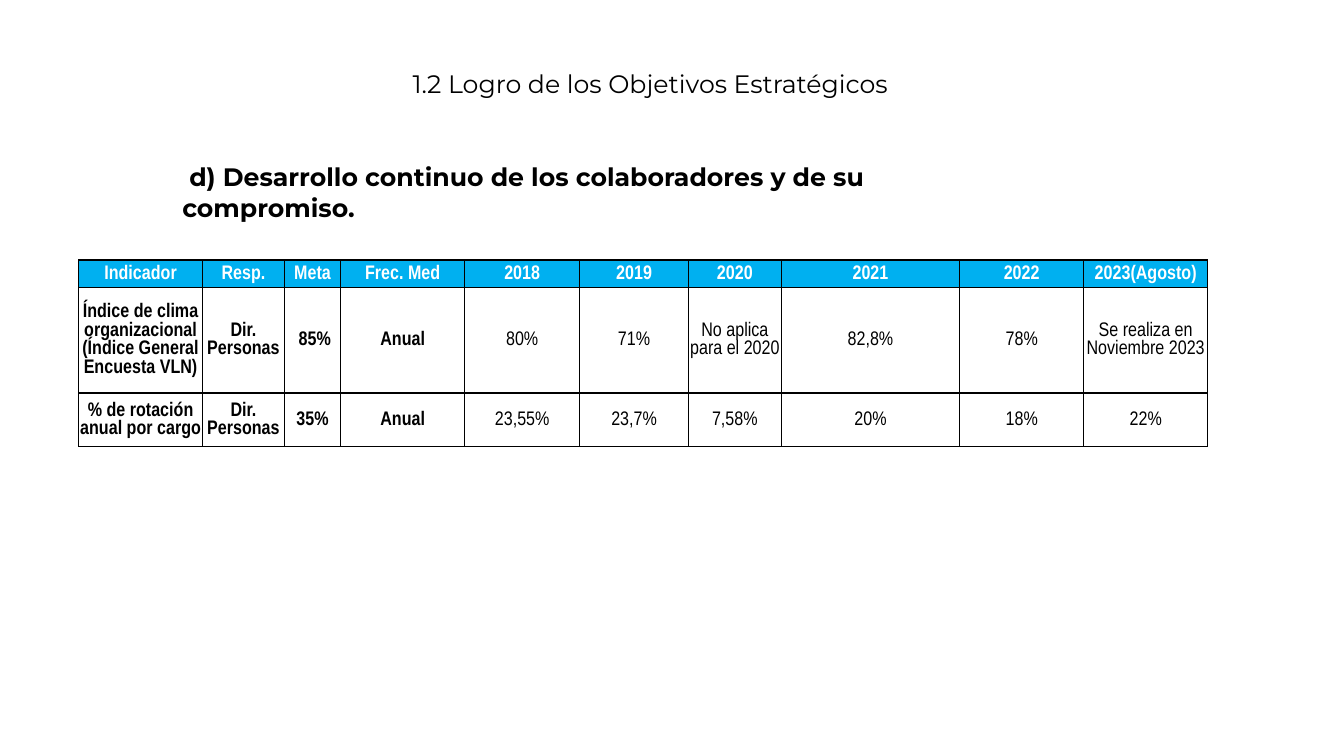
from lxml.etree import SubElement
from pptx import Presentation
from pptx.dml.color import RGBColor
from pptx.enum.text import MSO_ANCHOR as Anchor, PP_ALIGN as Align
from pptx.oxml.ns import qn
from pptx.util import Pt

PX = 9144
BLACK = RGBColor(0, 0, 0)
WHITE = RGBColor(255, 255, 255)
BLUE = RGBColor(0, 176, 240)

HEADINGS = [
    ("1.2 Logro de los Objetivos Estratégicos", (236, 42, 811, 81), Align.CENTER, False),
    ("d) Desarrollo continuo de los colaboradores y de su compromiso.",
     (171, 150, 807, 81), Align.LEFT, True),
]
ROWS = [
    ["Indicador", "Resp.", "Meta", "Frec. Med", "2018", "2019", "2020", "2021", "2022",
     "2023(Agosto)"],
    ["Índice de clima organizacional (Índice General Encuesta VLN)", "Dir. Personas",
     "\u00a085%".replace("\u00a0", chr(160)), "Anual", "80%", "71%",
     "No aplica para el 2020", "82,8%", "78%", "Se realiza en Noviembre 2023"],
    ["% de rotación anual por cargo", "Dir. Personas", "35%", "Anual", "23,55%", "23,7%",
     "7,58%", "20%", "18%", "22%"],
]
ROWS[1][2] = chr(160) + "85%"
COL_W = [123, 81, 56, 123, 114, 108, 92, 177, 123, 123]
ROW_H = [27, 105, 53]
TABLE_LEFT, TABLE_TOP = 78, 258
LABEL_COLS = 4
UNFILLED_COLS = range(3, 8)
CELL_FORMAT = {"margin_left": PX, "margin_right": PX, "margin_top": PX,
               "margin_bottom": 0, "vertical_anchor": Anchor.MIDDLE}


def set_attrs(obj, values):
    for name, value in values.items():
        setattr(obj, name, value)


def add_run(p, text, font, size, color, bold=False):
    r = p.add_run()
    r.text = text
    set_attrs(r.font, {"name": font, "size": Pt(size), "bold": bold})
    r.font.color.rgb = color


def add_borders(cell):
    pr = cell._tc.get_or_add_tcPr()
    for i, side in enumerate(("lnL", "lnR", "lnT", "lnB")):
        ln = pr.makeelement(qn(f"a:{side}"), {"w": str(Pt(1))})
        fill = SubElement(ln, qn("a:solidFill"))
        SubElement(fill, qn("a:srgbClr"), val=str(BLACK))
        pr.insert(i, ln)


def add_heading(slide, text, box, align, bold):
    tf = slide.shapes.add_textbox(*(v * PX for v in box)).text_frame
    set_attrs(tf, {"word_wrap": True, "vertical_anchor": Anchor.MIDDLE})
    p = tf.paragraphs[0]
    p.alignment = align
    add_run(p, " ", "Arial", 18, BLACK)
    add_run(p, text, "Montserrat", 18, BLACK, bold)


def add_indicators(slide):
    table = slide.shapes.add_table(
        len(ROWS), len(COL_W), TABLE_LEFT * PX, TABLE_TOP * PX,
        sum(COL_W) * PX, sum(ROW_H) * PX).table
    set_attrs(table, {"first_row": False, "horz_banding": False})
    for col, width in zip(table.columns, COL_W):
        col.width = width * PX
    for i, (row, height) in enumerate(zip(table.rows, ROW_H)):
        row.height = height * PX
        header = i == 0
        for j, cell in enumerate(row.cells):
            set_attrs(cell, CELL_FORMAT)
            if not header and j in UNFILLED_COLS:
                cell.fill.background()
            else:
                cell.fill.solid()
                cell.fill.fore_color.rgb = BLUE if header else WHITE
            add_borders(cell)
            p = cell.text_frame.paragraphs[0]
            p.alignment = Align.CENTER
            add_run(p, ROWS[i][j], "Arial Narrow", 14, WHITE if header else BLACK,
                    header or j < LABEL_COLS)


def main():
    prs = Presentation()
    set_attrs(prs, {"slide_width": 1333 * PX, "slide_height": 750 * PX})
    slide = prs.slides.add_slide(prs.slide_layouts[6])
    for heading in HEADINGS:
        add_heading(slide, *heading)
    add_indicators(slide)
    prs.save("out.pptx")


if __name__ == "__main__":
    main()
